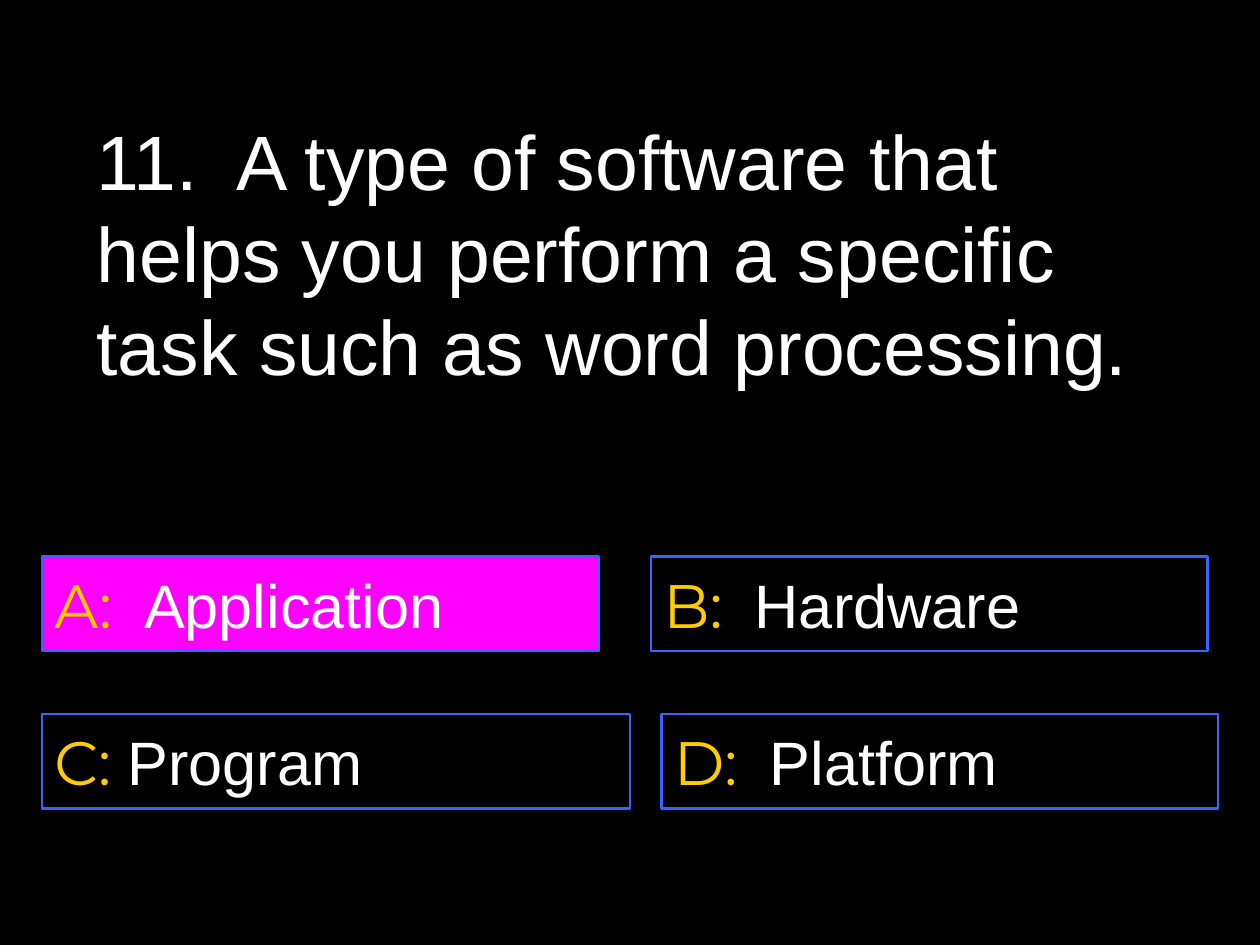
from lxml.etree import SubElement
from pptx import Presentation
from pptx.dml.color import RGBColor
from pptx.enum.shapes import MSO_SHAPE
from pptx.enum.text import MSO_ANCHOR, PP_ALIGN
from pptx.oxml.ns import qn
from pptx.util import Pt

BLACK = RGBColor(0x00, 0x00, 0x00)
WHITE = RGBColor(0xFF, 0xFF, 0xFF)
BLUE = RGBColor(0x33, 0x66, 0xFF)
GOLD = RGBColor(0xFF, 0xCC, 0x00)
MAGENTA = RGBColor(0xFF, 0x00, 0xFF)


def add_run(paragraph, text, font_name, size, color):
    run = paragraph.add_run()
    run.text = text
    run.font.name = font_name
    run.font.size = Pt(size)
    run.font.color.rgb = color


presentation = Presentation()
presentation.slide_width = Pt(720)
presentation.slide_height = Pt(540)
slide = presentation.slides.add_slide(presentation.slide_layouts[5])
slide.background.fill.solid()
slide.background.fill.fore_color.rgb = BLACK

# Question
title = slide.shapes.title
title.left, title.top, title.width, title.height = Pt(48), Pt(48), Pt(612), Pt(192)
title.text_frame.word_wrap = True
title.text_frame.vertical_anchor = MSO_ANCHOR.MIDDLE
paragraph = title.text_frame.paragraphs[0]
paragraph.alignment = PP_ALIGN.LEFT
add_run(paragraph, "11.  A type of software that helps you perform a specific "
        "task such as word processing.", "Arial", 44, WHITE)

# Answers: label, text, left, top, width, whether highlighted
answers = [
    ("A:  ", "Application", 24, 318, 318, True),
    ("B:  ", "Hardware", 372, 318, 318, False),
    ("C: ", "Program", 24, 408, 336, False),
    ("D:  ", "Platform", 378, 408, 318, False),
]
for label, answer, left, top, width, highlighted in answers:
    box = slide.shapes.add_shape(
        MSO_SHAPE.RECTANGLE, Pt(left), Pt(top), Pt(width), Pt(54))
    box.shadow.inherit = False
    box.fill.solid()
    box.fill.fore_color.rgb = MAGENTA if highlighted else BLACK
    if not highlighted:
        # Half-transparent fill
        color = box.fill._xPr.find(qn("a:solidFill"))[0]
        SubElement(color, qn("a:alpha"), val="50000")
    box.line.color.rgb = BLUE
    box.line.width = Pt(1.5)
    box.text_frame.word_wrap = False
    box.text_frame.vertical_anchor = MSO_ANCHOR.MIDDLE
    paragraph = box.text_frame.paragraphs[0]
    paragraph.alignment = PP_ALIGN.LEFT
    add_run(paragraph, label, "Montserrat", 35, GOLD)
    add_run(paragraph, answer, "Arial", 35, WHITE)

presentation.save("out.pptx")
